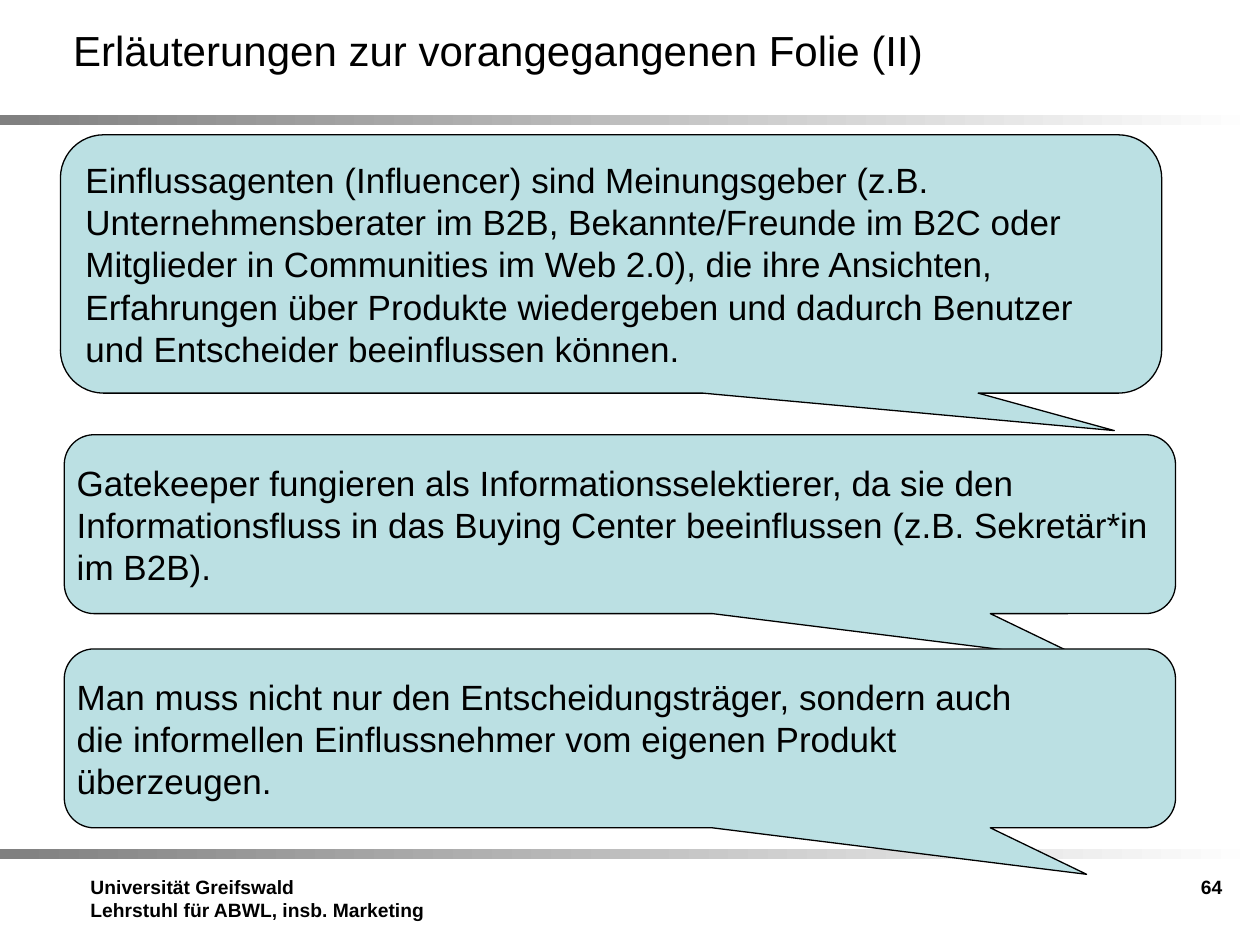
from dataclasses import dataclass

from pptx import Presentation, util as u
from pptx.dml import color
from pptx.enum import shapes, text


@dataclass(frozen=True)
class Theme:
    font: str = "Arial"
    ink: str = "000000"
    bubble: str = "BBE0E3"
    bar_from: str = "808080"
    bar_to: str = "FFFFFF"
    title: int = 24
    body: int = 20
    footer: int = 11
    line: float = 0.75


def rgb(value):
    return color.RGBColor.from_string(value)


class Deck:
    """Places elements on a grid of 100 columns by 75 rows."""

    COLS, ROWS = 100, 75

    def __init__(self, theme):
        self.theme = theme
        self.prs = Presentation()
        self.prs.slide_width, self.prs.slide_height = u.Inches(10), u.Inches(7.5)
        self.s = None

    def new_slide(self):
        self.s = self.prs.slides.add_slide(self.prs.slide_layouts[5])

    def box(self, col, row, cols, rows):
        x, y = self.prs.slide_width / self.COLS, self.prs.slide_height / self.ROWS
        return [round(v) for v in (col * x, row * y, cols * x, rows * y)]

    def set_text(self, sp, lines, size, bold=False, align=text.PP_ALIGN.LEFT,
                 anchor=text.MSO_ANCHOR.TOP, **frame):
        tf = sp.text_frame
        frame = {"word_wrap": True, "auto_size": text.MSO_AUTO_SIZE.NONE,
                 "vertical_anchor": anchor, **frame}
        for name, value in frame.items():
            setattr(tf, name, value)
        fmt = {"name": self.theme.font, "size": u.Pt(size), "bold": bold}
        for i, line in enumerate(lines):
            p = tf.paragraphs[0] if i == 0 else tf.add_paragraph()
            p.alignment = align
            r = p.add_run()
            r.text = line
            for name, value in fmt.items():
                setattr(r.font, name, value)
            r.font.color.rgb = rgb(self.theme.ink)

    def title(self, line, *area):
        sp = self.s.shapes.title
        sp.left, sp.top, sp.width, sp.height = self.box(*area)
        self.set_text(sp, [line], self.theme.title, anchor=text.MSO_ANCHOR.MIDDLE)

    def bar(self, *area):
        sp = self.s.shapes.add_shape(shapes.MSO_SHAPE.RECTANGLE, *self.box(*area))
        sp.shadow.inherit = False
        sp.line.fill.background()
        sp.fill.gradient()
        sp.fill.gradient_angle = 0
        ends = (self.theme.bar_from, self.theme.bar_to)
        for i, (stop, value) in enumerate(zip(sp.fill.gradient_stops, ends)):
            stop.position = i
            stop.color.rgb = rgb(value)

    def label(self, lines, *area, align=text.PP_ALIGN.LEFT):
        sp = self.s.shapes.add_textbox(*self.box(*area))
        self.set_text(sp, lines, self.theme.footer, bold=True, align=align)

    def callout(self, lines, *area, tip, inset=0.1):
        sp = self.s.shapes.add_shape(
            shapes.MSO_SHAPE.ROUNDED_RECTANGULAR_CALLOUT, *self.box(*area))
        sp.shadow.inherit = False
        for i, value in enumerate((*tip, 0.167)):
            sp.adjustments[i] = value
        sp.fill.solid()
        sp.fill.fore_color.rgb = rgb(self.theme.bubble)
        sp.line.color.rgb = rgb(self.theme.ink)
        sp.line.width = u.Pt(self.theme.line)
        self.set_text(sp, lines, self.theme.body, anchor=text.MSO_ANCHOR.MIDDLE,
                      margin_left=u.Inches(inset), margin_right=u.Inches(inset))


def main():
    deck = Deck(Theme())
    deck.new_slide()

    # Title, divider bars and footer
    deck.title("Erläuterungen zur vorangegangenen Folie (II)", 4.8, 0.8, 90, 6.3)
    for row in (9.1, 67.4):
        deck.bar(0, row, deck.COLS, 0.8)
    deck.label(["Universität Greifswald", "Lehrstuhl für ABWL, insb. Marketing"],
               6.2, 69, 31, 5.9)
    deck.label(["64"], 74.7, 69, 23.3, 5.7, align=text.PP_ALIGN.RIGHT)

    # Callouts
    deck.callout(
        ["Einflussagenten (Influencer) sind Meinungsgeber (z.B. "
         "Unternehmensberater im B2B, Bekannte/Freunde im B2C oder "
         "Mitglieder in Communities im Web 2.0), die ihre Ansichten, "
         "Erfahrungen über Produkte wiedergeben und dadurch Benutzer "
         "und Entscheider beeinflussen können."],
        4.8, 10.7, 87.4, 20.5, tip=(0.457, 0.645))
    lower = (
        (34.5, ["Gatekeeper fungieren als Informationsselektierer, da sie den "
                "Informationsfluss in das Buying Center beeinflussen "
                "(z.B. Sekretär*in im B2B)."]),
        (51.5, ["Man muss nicht nur den Entscheidungsträger, sondern auch",
                "die informellen Einflussnehmer vom eigenen Produkt",
                "überzeugen."]),
    )
    for row, lines in lower:
        deck.callout(lines, 5.1, row, 88.2, 14.2, tip=(0.42, 0.76), inset=0.03)

    deck.prs.save("out.pptx")


if __name__ == "__main__":
    main()
